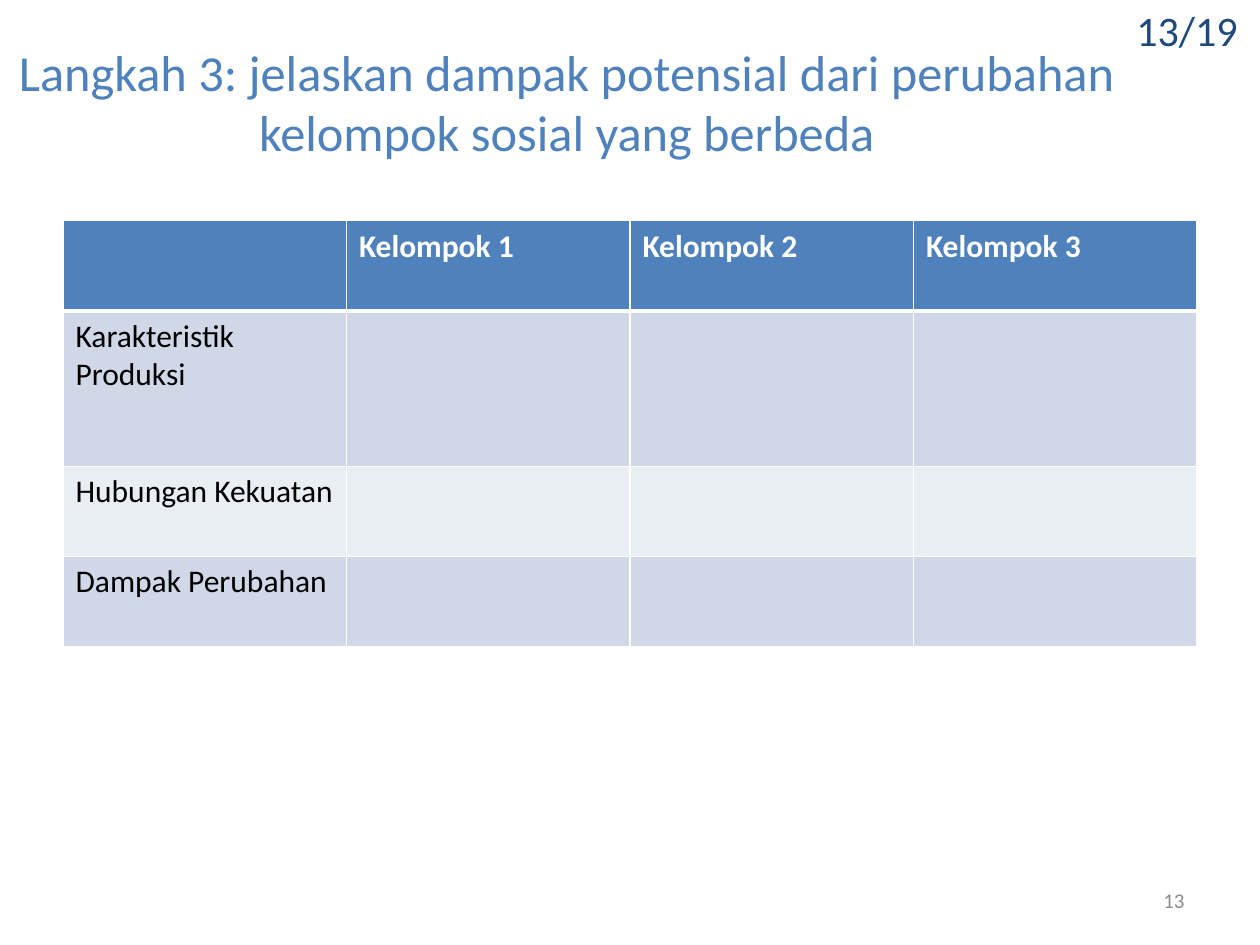
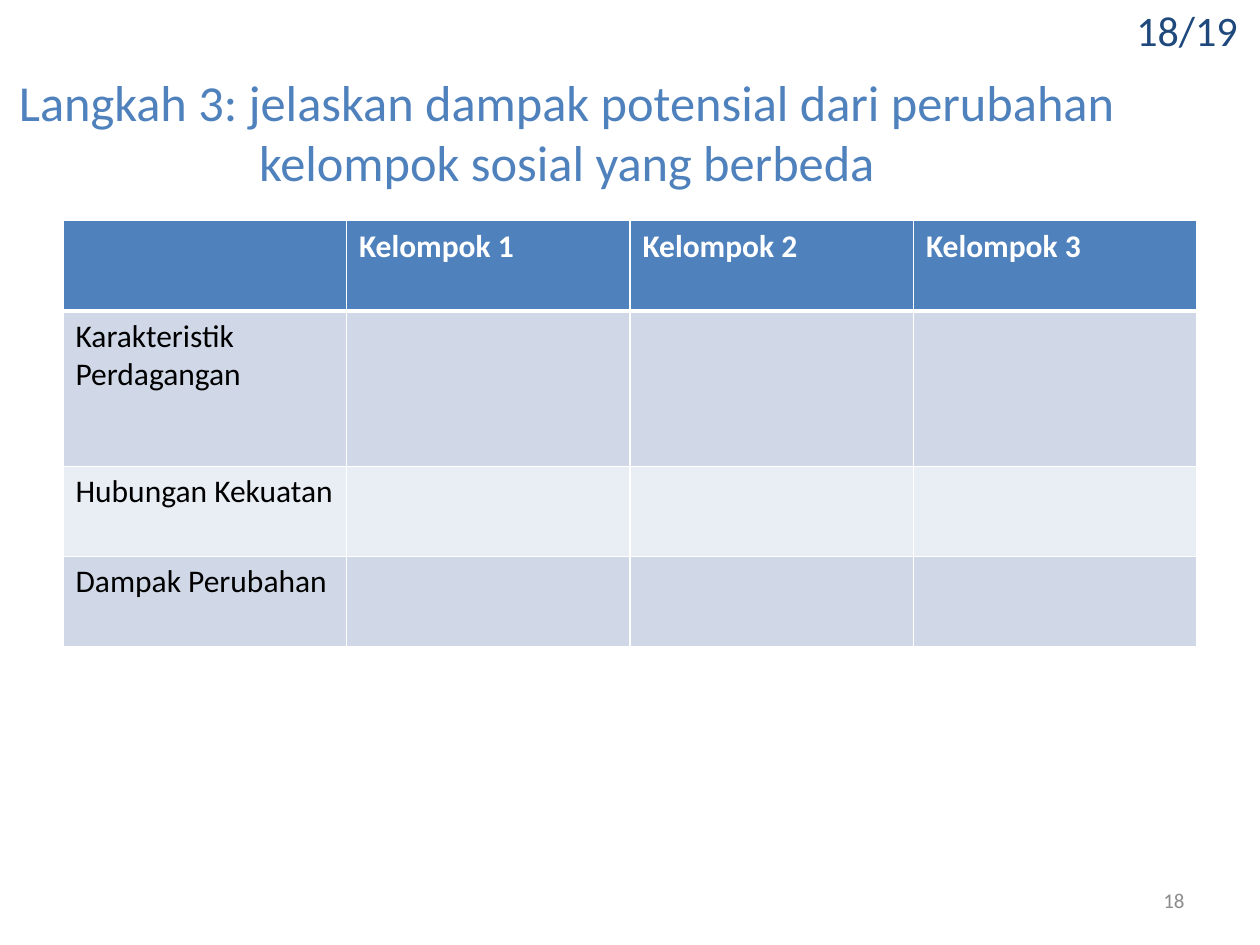
from lxml import etree
from pptx import Presentation
from pptx.dml.color import RGBColor
from pptx.enum import text as t
from pptx.oxml import ns
from pptx.util import Cm, Pt

BLUE = RGBColor(0x4F, 0x81, 0xBD)
NAVY = RGBColor(0x1F, 0x49, 0x7D)
GREY = RGBColor(0x8C, 0x8C, 0x8C)
WHITE = RGBColor(0xFF, 0xFF, 0xFF)
BLACK = RGBColor(0x00, 0x00, 0x00)
BANDS = RGBColor(0xD0, 0xD8, 0xE8), RGBColor(0xE9, 0xED, 0xF4)
FONT = "Calibri"
TOTAL = 19
TITLE = ("Langkah 3: jelaskan dampak potensial dari perubahan "
         "kelompok sosial yang berbeda")
HEADS = ["", "Kelompok 1", "Kelompok 2", "Kelompok 3"]
TOPICS = ["Hubungan Kekuatan", "Dampak Perubahan"]
# Boxes are left, top, width, height in cm
TITLE_BOX = 0, 1.22, 22.86, 2.72
COUNT_BOX = 21.82, -0.08, 3.38, 1.35
PAGE_BOX = 18.2, 17.65, 5.93, 1.01
TABLE_BOX = 1.27, 4.45, 22.86, 8.59
ROW, TALL = 1.82, 3.13


def write(frame, words, size=18, color=BLACK, bold=False,
          align=t.PP_ALIGN.LEFT):
    para = frame.paragraphs[0]
    para.alignment = align
    run = para.add_run()
    run.text = words
    font = run.font
    font.name, font.size, font.bold = FONT, Pt(size), bold
    font.color.rgb = color


def add_title(slide, box, drop):
    """Rest the title's last line drop cm above the bottom of its box."""
    title = slide.shapes.title
    title.left, title.top, title.width, title.height = map(Cm, box)
    frame = title.text_frame
    frame.word_wrap = True
    frame.auto_size = t.MSO_AUTO_SIZE.NONE
    frame.vertical_anchor = t.MSO_ANCHOR.BOTTOM
    frame.margin_top, frame.margin_bottom = 0, Cm(drop)
    write(frame, TITLE, size=28.8, color=BLUE, align=t.PP_ALIGN.CENTER)


def add_label(slide, box, words, **look):
    frame = slide.shapes.add_textbox(*map(Cm, box)).text_frame
    frame.word_wrap = True
    frame.vertical_anchor = t.MSO_ANCHOR.MIDDLE
    write(frame, words, align=t.PP_ALIGN.RIGHT, **look)


def add_edges(cell, top, bottom):
    """Draw white edges; top and bottom are widths in points."""
    props = cell._tc.get_or_add_tcPr()
    for side, width in zip("LRTB", (1, 1, top, bottom)):
        line = etree.SubElement(props, ns.qn(f"a:ln{side}"), w=str(Pt(width)))
        fill = etree.SubElement(line, ns.qn("a:solidFill"))
        etree.SubElement(fill, ns.qn("a:srgbClr"), val=str(WHITE))


def add_grid(slide, box, topic):
    rows = [HEADS] + [[name, "", "", ""] for name in [topic] + TOPICS]
    grid = slide.shapes.add_table(len(rows), len(HEADS), *map(Cm, box)).table
    for col in grid.columns:
        col.width = Cm(box[2] / len(HEADS))
    for r, row in enumerate(rows):
        head = r == 0
        grid.rows[r].height = Cm(TALL if r == 1 else ROW)
        for c, words in enumerate(row):
            cell = grid.cell(r, c)
            add_edges(cell, top=3 if r == 1 else 1, bottom=3 if head else 1)
            cell.fill.solid()
            cell.fill.fore_color.rgb = BLUE if head else BANDS[(r - 1) % 2]
            if words:
                write(cell.text_frame, words, bold=head,
                      color=WHITE if head else BLACK)


def add_step(deck, page, topic, drop):
    slide = deck.slides.add_slide(deck.slide_layouts[5])
    add_label(slide, PAGE_BOX, str(page), size=12, color=GREY)
    add_title(slide, TITLE_BOX, drop)
    add_label(slide, COUNT_BOX, f"{page}/{TOTAL}", size=24, color=NAVY)
    add_grid(slide, TABLE_BOX, topic)


def main():
    deck = Presentation()
    deck.slide_width, deck.slide_height = Cm(25.4), Cm(19.05)
    add_step(deck, 13, "Karakteristik Produksi", drop=0.68)
    add_step(deck, 18, "Karakteristik Perdagangan", drop=0.07)
    deck.save("out.pptx")


if __name__ == "__main__":
    main()
